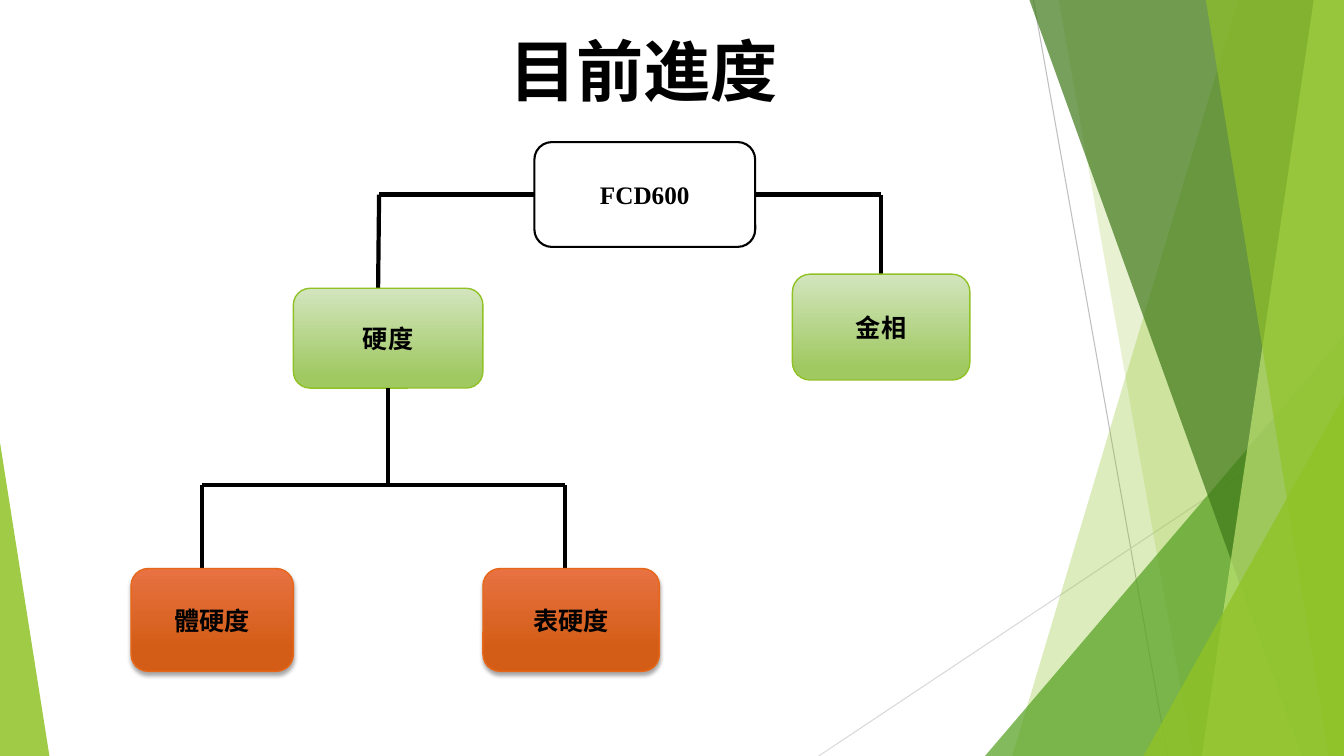
from dataclasses import dataclass

from pptx import Presentation
from pptx import util as u
from pptx.dml.color import RGBColor
from pptx.enum import shapes, text
from pptx.oxml import parse_xml
from pptx.oxml.ns import nsdecls, qn

PX = 9144


@dataclass(frozen=True)
class Theme:
    ink: str = "000000"
    paper: str = "FFFFFF"
    leaf: str = "90C226"
    grass: str = "54A021"
    forest: str = "3F7819"
    lime: str = "C0E474"
    ray: str = "BFBFBF"
    pale_ray: str = "D9D9D9"
    orange: str = "E76618"
    green_blend: tuple = ((0, "D3E5BE"), (0.88, "A0C962"))
    orange_blend: tuple = ((0, "E87242"), (0.78, "D35D16"))
    serif: str = "Times New Roman"
    sans: str = "Roboto"
    title_size: int = 48
    box_size: int = 18


T = Theme()


def rgb(value):
    return RGBColor.from_string(value)


def px(*values):
    return [v * PX for v in values]


def put_text(sp, content, size=T.box_size, font=T.sans, anchor=text.MSO_ANCHOR.MIDDLE):
    tf = sp.text_frame
    tf.word_wrap = True
    tf.vertical_anchor = anchor
    p = tf.paragraphs[0]
    p.alignment = text.PP_ALIGN.CENTER
    r = p.add_run()
    r.text = content
    r.font.size = u.Pt(size)
    r.font.name = font
    r.font.bold = True
    r.font.color.rgb = rgb(T.ink)


def tint(sp, color, alpha):
    sp.shadow.inherit = False
    sp.fill.solid()
    sp.fill.fore_color.rgb = rgb(color)
    sp.line.fill.background()
    clr = sp._element.spPr.find(".//" + qn("a:srgbClr"))
    clr.append(parse_xml(f'<a:alpha {nsdecls("a")} val="{alpha * 1000}"/>'))


def add_facet(s, points, color, alpha):
    fb = s.shapes.build_freeform(*points[0], scale=PX)
    fb.add_line_segments(points[1:], close=True)
    tint(fb.convert_to_shape(), color, alpha)


def add_triangle(s, box, apex, color, alpha):
    sp = s.shapes.add_shape(shapes.MSO_SHAPE.ISOSCELES_TRIANGLE, *px(*box))
    sp.adjustments[0] = apex
    tint(sp, color, alpha)


def add_line(s, start, end, color=T.ink, width=3):
    cx = s.shapes.add_connector(shapes.MSO_CONNECTOR.STRAIGHT, *px(*start, *end))
    cx.line.color.rgb = rgb(color)
    cx.line.width = u.Pt(width)
    cx._element.spPr.append(parse_xml(f'<a:effectLst {nsdecls("a")}/>'))
    return cx


def add_box(s, content, box, line, blend=None, width=1, font=T.sans, shadow=False):
    sp = s.shapes.add_shape(shapes.MSO_SHAPE.ROUNDED_RECTANGLE, *px(*box))
    if blend:
        sp.fill.gradient()
        sp.fill.gradient_angle = 270
        for stop, (position, color) in zip(sp.fill.gradient_stops, blend):
            stop.position = position
            stop.color.rgb = rgb(color)
    else:
        sp.fill.solid()
        sp.fill.fore_color.rgb = rgb(T.paper)
    sp.line.color.rgb = rgb(line)
    sp.line.width = u.Pt(width)
    sp.shadow.inherit = False
    if shadow:
        sp._element.spPr.find(qn("a:effectLst")).append(parse_xml(
            f'<a:outerShdw {nsdecls("a")} blurRad="{u.Pt(3)}" dist="{u.Pt(2)}" '
            f'dir="5400000" rotWithShape="0"><a:srgbClr val="{T.ink}">'
            '<a:alpha val="35000"/></a:srgbClr></a:outerShdw>'))
    put_text(sp, content, font=font)
    return sp


def add_backdrop(s):
    add_line(s, (1025, 0), (1158, 750), T.ray, 0.75)
    add_line(s, (1333, 403), (812, 750), T.pale_ray, 0.75)

    def facet(top, bottom, color, alpha):
        add_facet(s, [(top, 0), (1333, 0), (1333, 750), (bottom, 750)], color, alpha)

    facet(1228, 1004, T.leaf, 30)
    facet(1050, 1183, T.leaf, 20)
    add_triangle(s, (977, 333, 356, 417), 1, T.grass, 72)
    facet(1021, 1291, T.forest, 70)
    facet(1303, 1192, T.lime, 70)
    facet(1196, 1318, T.leaf, 65)
    add_triangle(s, (1134, 393, 199, 357), 1, T.leaf, 80)
    add_triangle(s, (0, 439, 49, 311), 0, T.leaf, 85)


def add_tree(s):
    root = add_box(s, "FCD600", (530, 141, 219, 104), T.ink, width=1.5, font=T.serif)
    add_line(s, (530, 193), (376, 193)).begin_connect(root, 1)
    add_line(s, (376, 193), (375, 286))
    add_line(s, (749, 193), (874, 193)).begin_connect(root, 3)
    metal_drop = add_line(s, (874, 193), (874, 272))
    hardness = add_box(s, "硬度", (291, 286, 188, 99), T.leaf, T.green_blend)
    metal = add_box(s, "金相", (786, 272, 176, 105), T.leaf, T.green_blend)
    metal_drop.end_connect(metal, 0)

    add_line(s, (385, 385), (385, 481)).begin_connect(hardness, 2)
    add_line(s, (200, 481), (560, 481))
    for content, left, width, drop in (("體硬度", 130, 161, 200), ("表硬度", 479, 175, 560)):
        add_line(s, (drop, 481), (drop, 564))
        add_box(s, content, (left, 564, width, 102), T.orange, T.orange_blend, shadow=True)


def main():
    prs = Presentation()
    prs.slide_width, prs.slide_height = px(1333, 750)
    s = prs.slides.add_slide(prs.slide_layouts[6])
    add_backdrop(s)
    title = s.shapes.add_textbox(*px(76, 24, 1125, 144))
    put_text(title, "目前進度", size=T.title_size, font=T.serif, anchor=text.MSO_ANCHOR.TOP)
    add_tree(s)
    prs.save("out.pptx")


if __name__ == "__main__":
    main()
